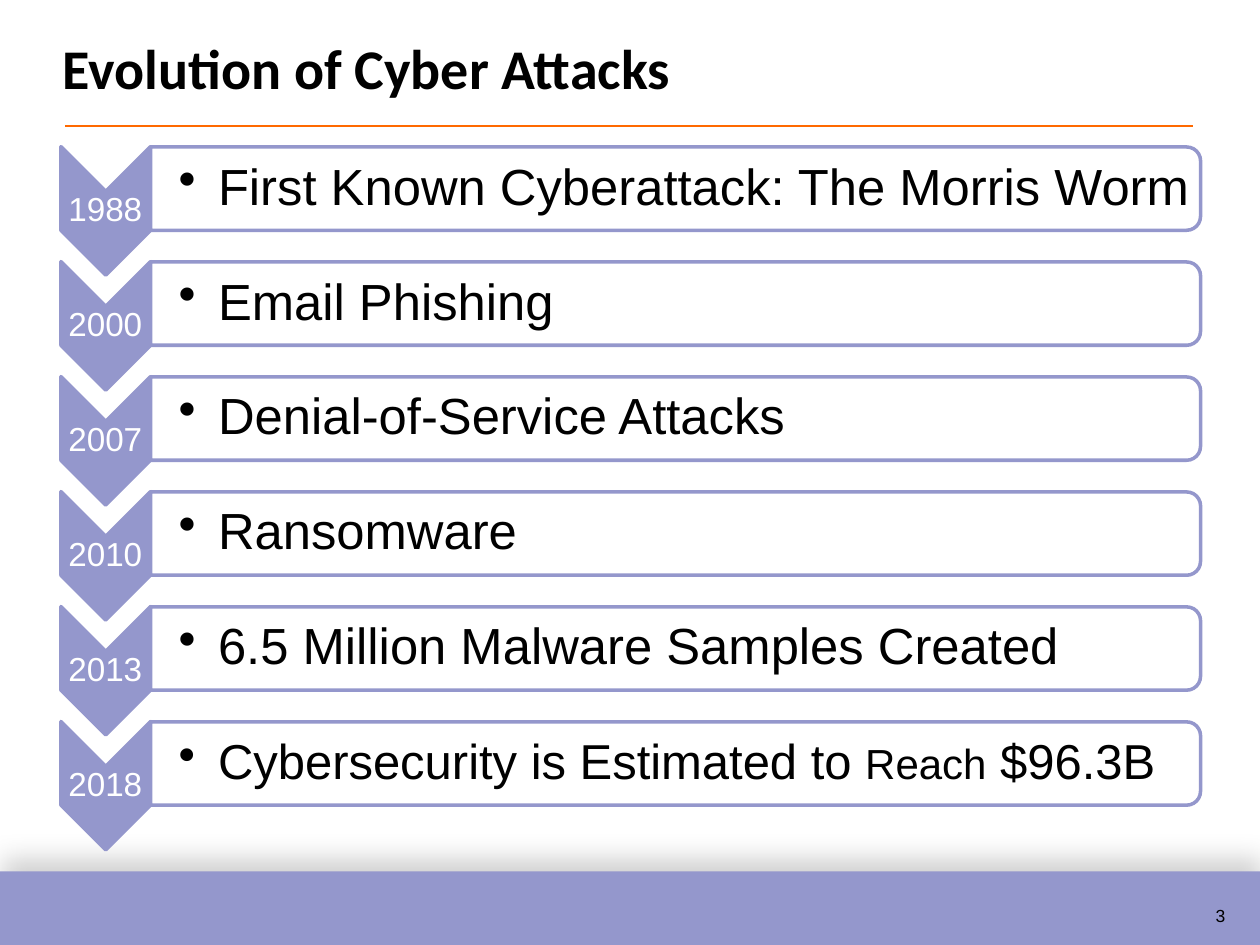
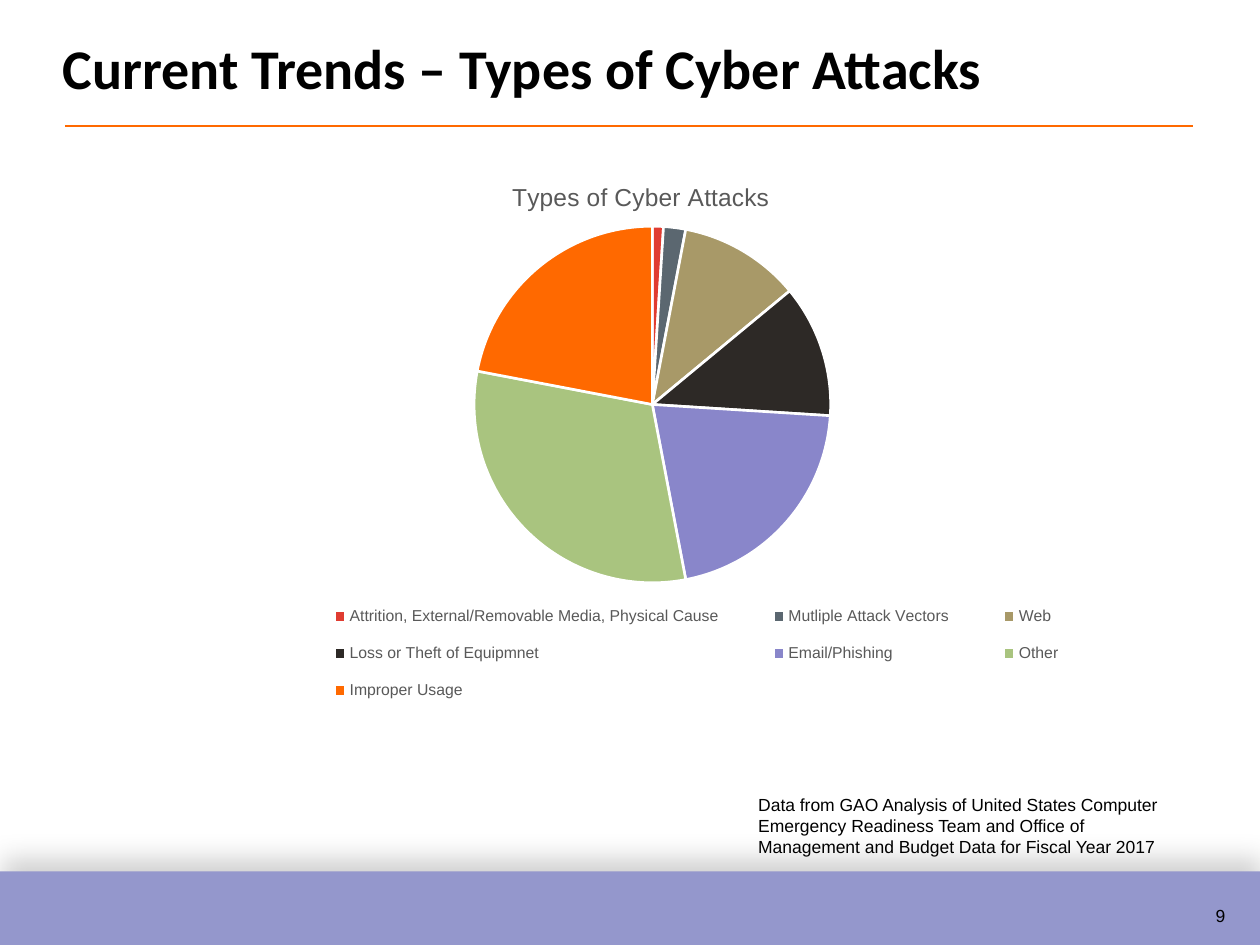
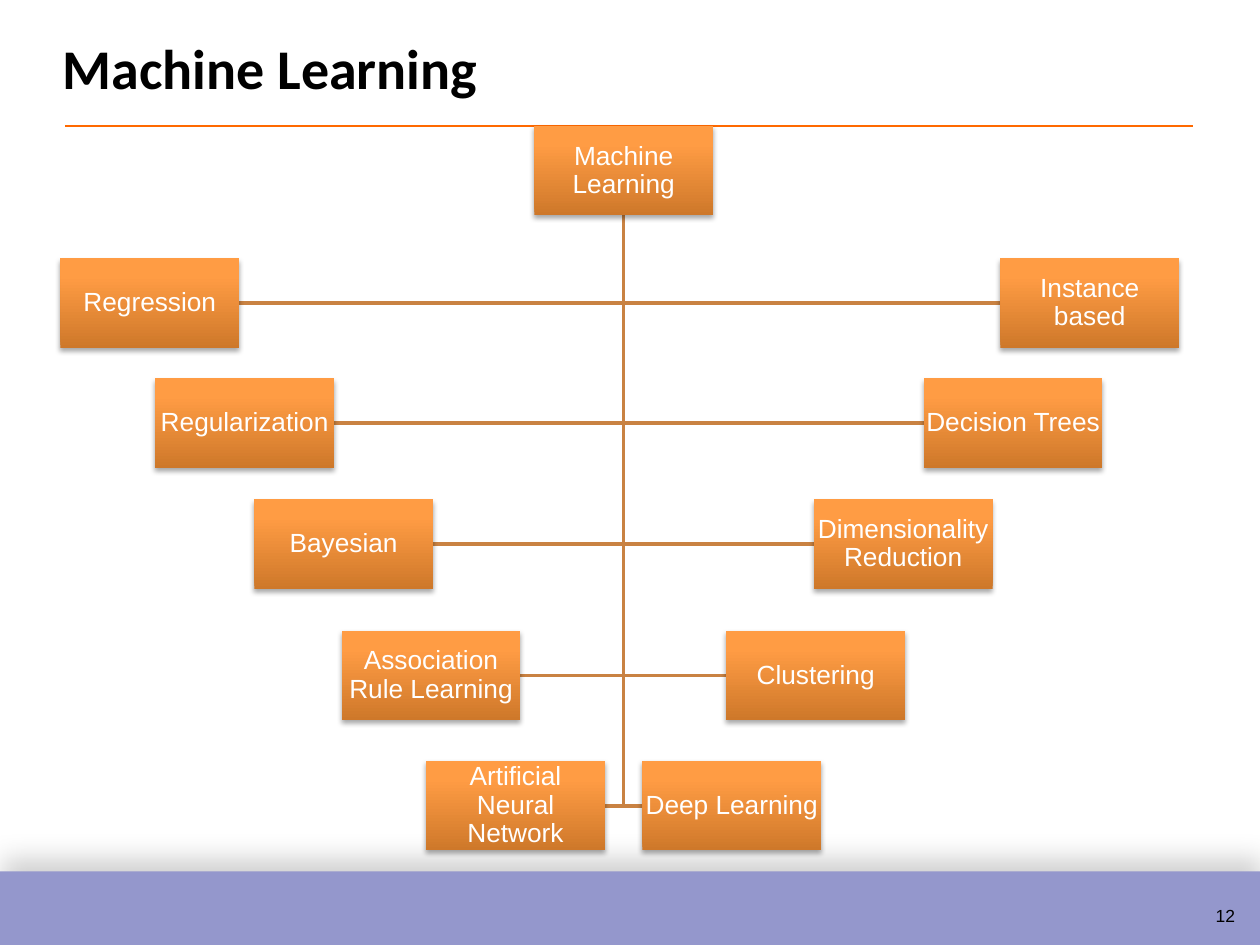
"""Builds three slides on cyber attacks: a timeline, a pie chart and a tree of machine learning methods."""
import copy

import pptx
import pptx.chart.data
import pptx.dml.color
import pptx.enum.chart
import pptx.enum.shapes
import pptx.enum.text
import pptx.oxml
import pptx.oxml.ns
import pptx.util

Pt = pptx.util.Pt
SHAPE = pptx.enum.shapes.MSO_SHAPE
MIDDLE = pptx.enum.text.MSO_ANCHOR.MIDDLE
CENTER = pptx.enum.text.PP_ALIGN.CENTER
rgb = pptx.dml.color.RGBColor.from_string
qn = pptx.oxml.ns.qn

LAVENDER, ORANGE, BROWN = "9497CC", "FF6900", "C98242"
BLACK, WHITE, GREY = "000000", "FFFFFF", "595959"
TIGHT = {"vertical_anchor": MIDDLE, "margin_left": Pt(0.7), "margin_right": Pt(0.7),
         "margin_top": Pt(0.7), "margin_bottom": Pt(0.7)}
CENTERED = {"alignment": CENTER, "line_spacing": 0.9}


def write_text(shape, runs, color=BLACK, frame=None, paragraph=None, font=None):
    """Write (text, size) runs as one paragraph and return the paragraph."""
    line = shape.text_frame.paragraphs[0]
    formats = [(shape.text_frame, {"word_wrap": True, **(frame or {})}), (line, paragraph or {})]
    for text, size in runs:
        run = line.add_run()
        run.text = text
        run.font.color.rgb = rgb(color)
        formats.append((run.font, {"name": "Arial", "size": Pt(size), **(font or {})}))
    for target, values in formats:
        for name, value in values.items():
            setattr(target, name, value)
    return line


def style_shape(shape, fill=None, line=None, shadow=None):
    """Set fill, line and an optional (opacity, blur, distance, angle) shadow."""
    shape.shadow.inherit = False
    if fill:
        shape.fill.solid()
        shape.fill.fore_color.rgb = rgb(fill)
    else:
        shape.fill.background()
    if line:
        shape.line.color.rgb = rgb(line)
        shape.line.width = Pt(2)
    else:
        shape.line.fill.background()
    if shadow:
        opacity, blur, distance, angle = shadow
        shape._element.spPr.find(qn("a:effectLst")).append(pptx.oxml.parse_xml(
            f'<a:outerShdw {pptx.oxml.ns.nsdecls("a")} blurRad="{Pt(blur)}" dist="{Pt(distance)}" '
            f'dir="{angle * 60000}" algn="ctr" rotWithShape="0"><a:srgbClr val="{BLACK}">'
            f'<a:alpha val="{opacity * 1000}"/></a:srgbClr></a:outerShdw>'))


deck = pptx.Presentation()
deck.slide_width, deck.slide_height = Pt(720), Pt(540)

pages = []
for title, number in [("Evolution of Cyber Attacks", "3"),
                      ("Current Trends – Types of Cyber Attacks", "9"),
                      ("Machine Learning", "12")]:
    shapes = deck.slides.add_slide(deck.slide_layouts[6]).shapes
    pages.append(shapes)
    band = shapes.add_shape(SHAPE.RECTANGLE, Pt(0), Pt(498), Pt(720), Pt(42))
    style_shape(band, LAVENDER, shadow=(19, 16, 8, 277))
    page_number = shapes.add_textbox(Pt(687.6), Pt(507.6), Pt(26.6), Pt(24.5))
    write_text(page_number, [(number, 10)], frame={"word_wrap": False}, paragraph={"line_spacing": 1.5})
    rule = shapes.add_connector(pptx.enum.shapes.MSO_CONNECTOR.STRAIGHT, Pt(37.4), Pt(72), Pt(682), Pt(72))
    rule.line.color.rgb = rgb(ORANGE)
    rule.line.width = Pt(1)
    rule._element.spPr.append(pptx.oxml.parse_xml(f'<a:effectLst {pptx.oxml.ns.nsdecls("a")}/>'))
    heading = shapes.add_textbox(Pt(28.8), Pt(15.8), Pt(658.8), Pt(46))
    write_text(heading, [(title, 32)], font={"name": "Calibri", "bold": True})

timeline, trends, learning = pages

events = [
    ("1988", [("First Known Cyberattack: The Morris Worm", 29)]),
    ("2000", [("Email Phishing", 29)]),
    ("2007", [("Denial-of-Service Attacks", 29)]),
    ("2010", [("Ransomware", 29)]),
    ("2013", [("6.5 Million Malware Samples Created", 29)]),
    ("2018", [("Cybersecurity is Estimated to ", 28), ("Reach", 24), (" $96.3B", 28)]),
]
for row, (year, event) in enumerate(events):
    offset = row * 65.7
    arrow = timeline.add_shape(SHAPE.CHEVRON, Pt(23.7), Pt(94.9 + offset), Pt(73.4), Pt(51.2))
    style_shape(arrow, LAVENDER, LAVENDER)
    bar = timeline.add_shape(SHAPE.ROUND_2_SAME_RECTANGLE, Pt(362.2), Pt(offset - 192.2), Pt(47.6), Pt(600))
    style_shape(bar, WHITE, LAVENDER)
    arrow.rotation = bar.rotation = 90
    year_label = timeline.add_textbox(Pt(34.6), Pt(109.4 + offset), Pt(51.2), Pt(22.2))
    write_text(year_label, [(year, 19)], WHITE, TIGHT, CENTERED)
    event_label = timeline.add_textbox(Pt(85.7), Pt(86.2 + offset), Pt(597.6), Pt(43.2))
    entry = write_text(event_label, event, frame={**TIGHT, "margin_left": Pt(16.4)},
                       paragraph={"line_spacing": 0.9})
    indents = entry._p.get_or_add_pPr()
    indents.set("marL", str(Pt(22.5)))
    indents.set("indent", str(Pt(-22.5)))
    indents.append(pptx.oxml.parse_xml(f'<a:buChar {pptx.oxml.ns.nsdecls("a")} char="•"/>'))

attack_types = [
    ("Attrition, External/Removable Media, Physical Cause", 1, "E03C31"),
    ("Mutliple Attack Vectors", 2, "5B6770"),
    ("Web", 11, "A89968"),
    ("Loss or Theft of Equipmnet", 12, "2D2926"),
    ("Email/Phishing", 21, "8986CA"),
    ("Other", 31, "A9C47F"),
    ("Improper Usage", 22, ORANGE),
]
shares = pptx.chart.data.CategoryChartData()
shares.categories = [name for name, share, color in attack_types]
shares.add_series("Series 1", [share for name, share, color in attack_types])
pie = trends.add_chart(pptx.enum.chart.XL_CHART_TYPE.PIE, Pt(48.2), Pt(87.1),
                       Pt(636.5), Pt(351.4), shares).chart
pie.has_title = pie.has_legend = True
pie.chart_title.text_frame.text = "Types of Cyber Attacks"
pie.legend.position = pptx.enum.chart.XL_LEGEND_POSITION.BOTTOM
pie.legend.include_in_layout = False
pie_title = pie.chart_title.text_frame.paragraphs[0].runs[0]
for font, size, color in [(pie.font, 10, BLACK), (pie.legend.font, 9, GREY), (pie_title.font, 14, GREY)]:
    for name, value in {"name": "Arial", "size": Pt(size), "bold": False}.items():
        setattr(font, name, value)
    font.color.rgb = rgb(color)
pie.plots[0].vary_by_categories = True
for index, (name, share, color) in enumerate(attack_types):
    slice_format = pie.plots[0].series[0].points[index].format
    slice_format.fill.solid()
    slice_format.fill.fore_color.rgb = rgb(color)
    slice_format.line.color.rgb = rgb(WHITE)
    slice_format.line.width = Pt(1.5)

plot_area = pie._chartSpace.chart.plotArea
for part, position, places in [
    (plot_area, 0, {"x": 0.07, "y": 0.12, "w": 0.88, "h": 0.58}),
    (pie.chart_title._element, 1, {"x": 0.38, "y": 0.04}),
    (pie.legend._element, 1, {"x": 0.18, "y": 0.71, "w": 0.74, "h": 0.21}),
]:
    for automatic in part.findall(qn("c:layout")):
        part.remove(automatic)
    target = '<c:layoutTarget val="inner"/>' if part is plot_area else ""
    modes = "".join(f'<c:{axis}Mode val="edge"/>' for axis in "xy")
    values = "".join(f'<c:{key} val="{value}"/>' for key, value in places.items())
    part.insert(position, pptx.oxml.parse_xml(
        f'<c:layout {pptx.oxml.ns.nsdecls("c")}><c:manualLayout>{target}{modes}{values}'
        '</c:manualLayout></c:layout>'))

data_source = trends.add_textbox(Pt(426.2), Pt(450), Pt(258.5), Pt(44))
write_text(data_source, [("Data from GAO Analysis of United States Computer Emergency Readiness Team "
                          "and Office of Management and Budget Data for Fiscal Year 2017", 10)])

box_width, box_height, trunk, root_top = 102.2, 51.1, 356.4, 72
method_rows = [
    (147.6, ("Regression", 34.5), ("Instance based", 571.6)),
    (216.2, ("Regularization", 88.7), ("Decision Trees", 527.8)),
    (285.3, ("Bayesian", 145.3), ("Dimensionality Reduction", 465)),
    (360.5, ("Association Rule Learning", 195.2), ("Clustering", 415)),
    (434.9, ("Artificial Neural Network", 243.5), ("Deep Learning", 367)),
]
methods = [(name, left, top) for top, *pair in method_rows for name, left in pair]
for name, left, top in reversed(methods):
    joint = top + box_height / 2
    edge = left + box_width if left < trunk else left
    branch = learning.build_freeform(Pt(trunk), Pt(root_top + box_height))
    branch.add_line_segments([(Pt(trunk), Pt(joint)), (Pt(edge), Pt(joint))], close=False)
    style_shape(branch.convert_to_shape(), line=BROWN)

for name, left, top in [("Machine Learning", trunk - box_width / 2, root_top)] + methods:
    method = learning.add_shape(SHAPE.RECTANGLE, Pt(left), Pt(top), Pt(box_width), Pt(box_height))
    style_shape(method, shadow=(35, 3.1, 1.8, 90))
    method.fill.gradient()
    method.fill.gradient_angle = 90
    last_stop = method.fill.gradient_stops[1]._gs
    last_stop.addnext(copy.deepcopy(last_stop))
    for stop, (place, color) in zip(method.fill.gradient_stops,
                                    [(0, "CE782A"), (0.8, "FF9C44"), (1, "FF9D45")]):
        stop.position = place
        stop.color.rgb = rgb(color)
    write_text(method, [(name, 15)], WHITE, TIGHT, CENTERED)

deck.save("out.pptx")
